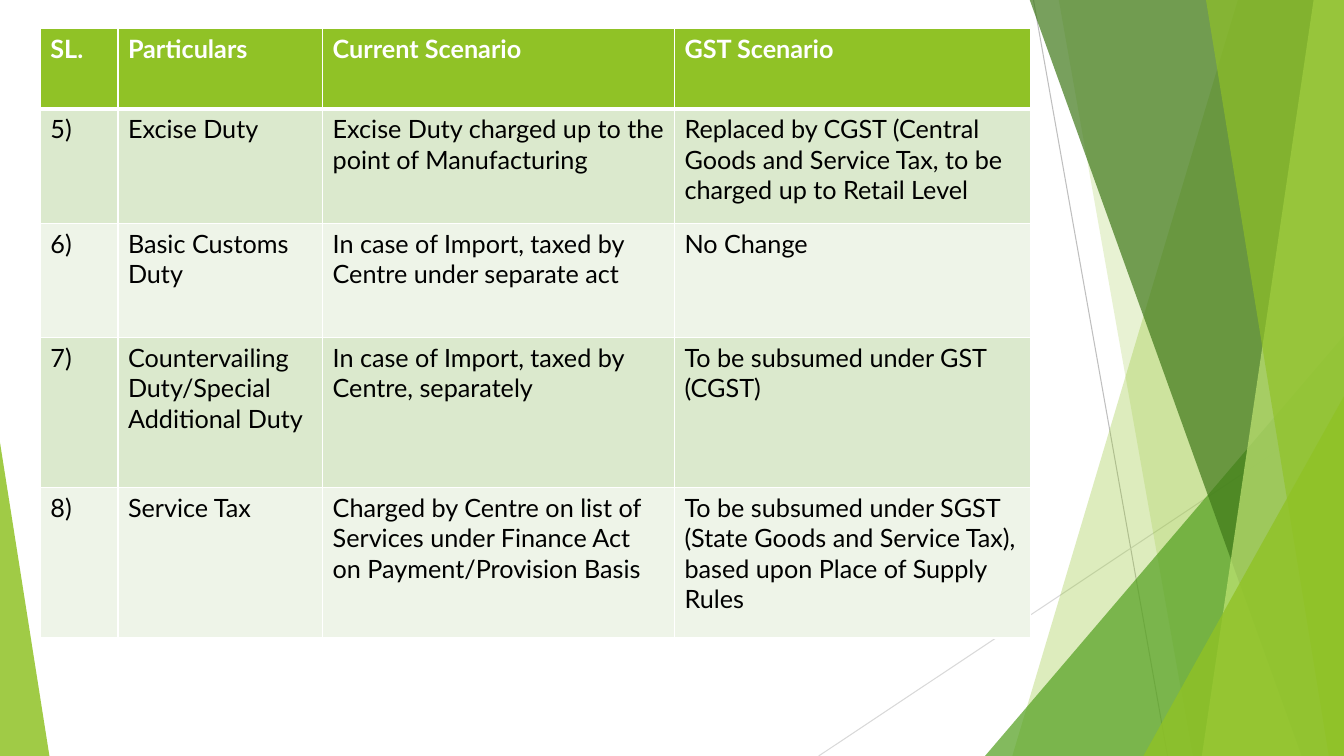
import pptx
import pptx.dml.color
import pptx.enum.shapes
import pptx.oxml
import pptx.oxml.ns
import pptx.util
from pptx.dml.color import RGBColor
from pptx.util import Inches

WHITE = RGBColor(0xFF, 0xFF, 0xFF)
BLACK = RGBColor(0x00, 0x00, 0x00)
LIME = RGBColor(0x90, 0xC2, 0x26)
PALE_LIME = RGBColor(0xC0, 0xE4, 0x74)
GREEN = RGBColor(0x54, 0xA0, 0x21)
DARK_GREEN = RGBColor(0x3F, 0x78, 0x19)
BAND_DARK = RGBColor(0xDB, 0xE9, 0xCD)
BAND_LIGHT = RGBColor(0xEE, 0xF4, 0xE8)
GREY = RGBColor(0xBF, 0xBF, 0xBF)
LIGHT_GREY = RGBColor(0xD9, 0xD9, 0xD9)

WIDTH, HEIGHT = 13.33, 7.5
FACET_TOP = -0.01

ROWS = [
    ("SL.", "Particulars", "Current Scenario", "GST Scenario"),
    ("5)", "Excise Duty", "Excise Duty charged up to the point of Manufacturing",
     "Replaced by CGST (Central Goods and Service Tax, to be charged up to Retail Level"),
    ("6)", "Basic Customs Duty", "In case of Import, taxed by Centre under separate act",
     "No Change"),
    ("7)", "Countervailing Duty/Special Additional Duty",
     "In case of Import, taxed by Centre, separately", "To be subsumed under GST (CGST)"),
    ("8)", "Service Tax",
     "Charged by Centre on list of Services under Finance Act on Payment/Provision Basis",
     "To be subsumed under SGST (State Goods and Service Tax), based upon Place of Supply Rules"),
]
TABLE_LEFT, TABLE_TOP = 0.4, 0.28
COLUMN_WIDTHS = [0.77, 2.03, 3.49, 3.53]
ROW_HEIGHTS = [0.8, 1.14, 1.13, 1.49, 1.49]

# Thin lines: start, end, colour
LINES = [
    ((10.25, 0), (11.58, HEIGHT), GREY),
    ((WIDTH, 4.03), (8.12, HEIGHT), LIGHT_GREY),
]
# Back to front. Facet: top x, bottom x; both run to the right edge.
# Triangle: left, top, width, apex position; all stand on the bottom edge.
DECORATIONS = [
    ("facet", (12.28, 10.04), LIME, 30),
    ("facet", (10.5, 11.83), LIME, 20),
    ("triangle", (9.77, 3.33, 3.56, 1), GREEN, 72),
    ("facet", (10.21, 12.91), DARK_GREEN, 70),
    ("facet", (13.03, 11.92), PALE_LIME, 70),
    ("facet", (11.96, 13.18), LIME, 65),
    ("triangle", (11.34, 3.93, 1.99, 1), LIME, 80),
    ("triangle", (0, 4.39, 0.49, 0), LIME, 85),
]


def add_line(slide, start, end, color):
    line = slide.shapes.add_connector(
        pptx.enum.shapes.MSO_CONNECTOR.STRAIGHT, *map(Inches, start + end))
    line.line.color.rgb = color
    line.line.width = pptx.util.Pt(0.75)
    pptx.oxml.ns.qn("a:effectLst")
    properties = line._element.spPr
    properties.append(properties.makeelement(pptx.oxml.ns.qn("a:effectLst"), {}))


def add_facet(slide, top_x, bottom_x):
    points = [(top_x, FACET_TOP), (WIDTH, FACET_TOP), (WIDTH, HEIGHT), (bottom_x, HEIGHT)]
    corners = [(Inches(x), Inches(y)) for x, y in points]
    builder = slide.shapes.build_freeform(*corners[0])
    builder.add_line_segments(corners[1:], close=True)
    return builder.convert_to_shape()


def add_triangle(slide, left, top, width, apex):
    shape = slide.shapes.add_shape(
        pptx.enum.shapes.MSO_SHAPE.ISOSCELES_TRIANGLE,
        *map(Inches, (left, top, width, HEIGHT - top)))
    shape.adjustments[0] = apex
    return shape


def paint(shape, color, opacity):
    shape.shadow.inherit = False
    shape.line.fill.background()
    shape.fill.solid()
    shape.fill.fore_color.rgb = color
    color_element = shape._element.spPr.find(".//" + pptx.oxml.ns.qn("a:srgbClr"))
    alpha = color_element.makeelement(
        pptx.oxml.ns.qn("a:alpha"), {"val": str(opacity * 1000)})
    color_element.append(alpha)


def add_borders(cell, widths):
    properties = cell._tc.get_or_add_tcPr()
    for side, width in widths.items():
        properties.append(pptx.oxml.parse_xml(
            f'<a:ln{side} {pptx.oxml.ns.nsdecls("a")} w="{pptx.util.Pt(width)}">'
            f'<a:solidFill><a:srgbClr val="{WHITE}"/></a:solidFill></a:ln{side}>'))


def add_tax_table(slide):
    table = slide.shapes.add_table(
        len(ROWS), len(COLUMN_WIDTHS), Inches(TABLE_LEFT), Inches(TABLE_TOP),
        Inches(sum(COLUMN_WIDTHS)), Inches(sum(ROW_HEIGHTS))).table
    for column, width in zip(table.columns, COLUMN_WIDTHS):
        column.width = Inches(width)
    for row, height in zip(table.rows, ROW_HEIGHTS):
        row.height = Inches(height)

    for row_index, texts in enumerate(ROWS):
        header = row_index == 0
        band = LIME if header else BAND_DARK if row_index % 2 else BAND_LIGHT
        borders = {"L": 1, "R": 1, "T": 3 if row_index == 1 else 1, "B": 3 if header else 1}
        font_format = {"name": "Lato", "size": pptx.util.Pt(18), "bold": header}
        for column_index, text in enumerate(texts):
            cell = table.cell(row_index, column_index)
            add_borders(cell, borders)
            cell.fill.solid()
            cell.fill.fore_color.rgb = band
            cell.text = text
            font = cell.text_frame.paragraphs[0].runs[0].font
            for name, value in font_format.items():
                setattr(font, name, value)
            font.color.rgb = WHITE if header else BLACK


def main():
    presentation = pptx.Presentation()
    presentation.slide_width = Inches(WIDTH)
    presentation.slide_height = Inches(HEIGHT)
    slide = presentation.slides.add_slide(presentation.slide_layouts[6])

    # Background facets
    for start, end, color in LINES:
        add_line(slide, start, end, color)
    builders = {"facet": add_facet, "triangle": add_triangle}
    for kind, geometry, color, opacity in DECORATIONS:
        paint(builders[kind](slide, *geometry), color, opacity)

    # Tax comparison
    add_tax_table(slide)
    presentation.save("out.pptx")


if __name__ == "__main__":
    main()
